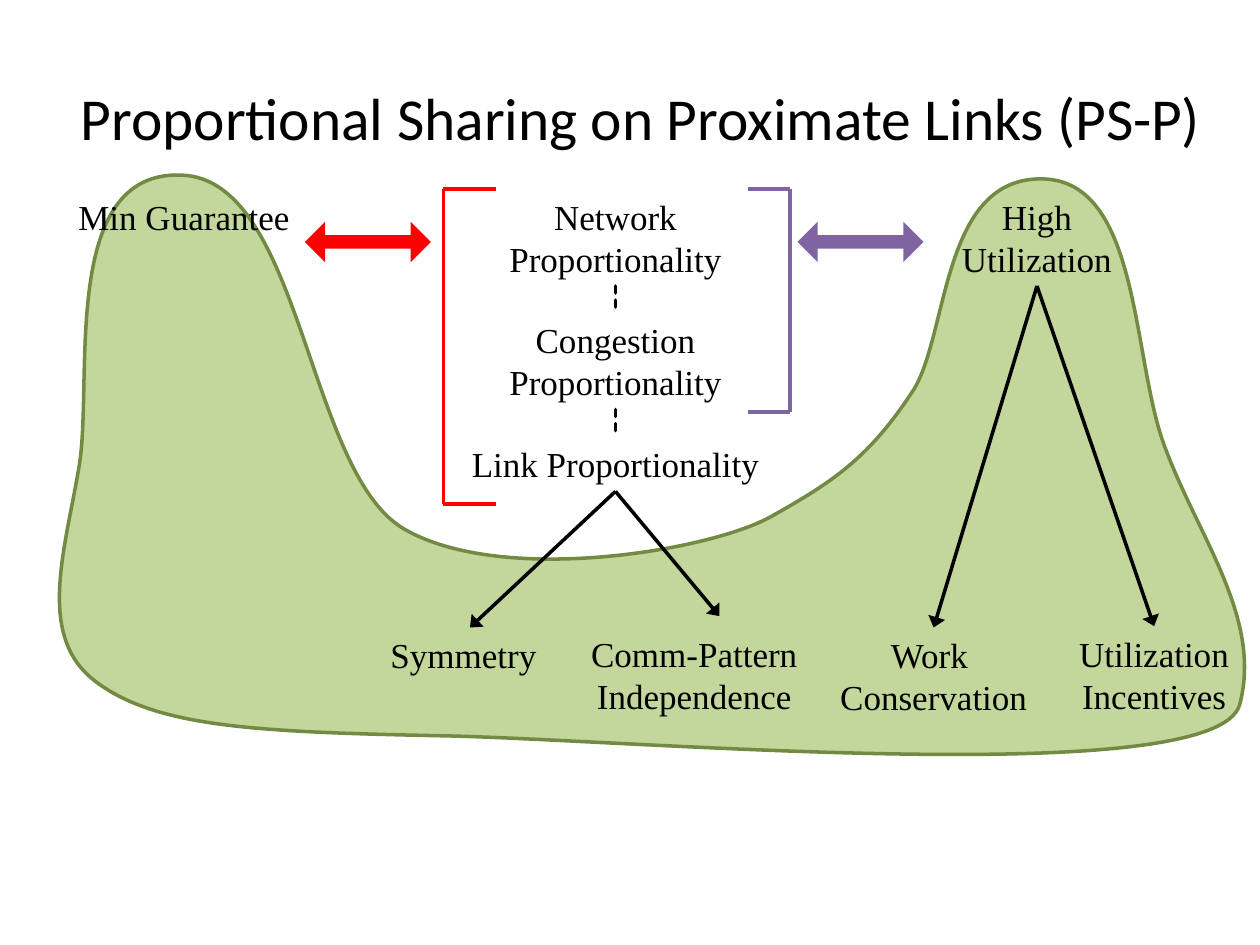
"""Build the slide on proportional sharing over proximate links."""
from dataclasses import dataclass

from pptx import Presentation
from pptx.dml.color import RGBColor
from pptx.enum.dml import MSO_LINE
from pptx.enum.shapes import MSO_CONNECTOR, MSO_SHAPE
from pptx.enum.text import MSO_ANCHOR, MSO_AUTO_SIZE, PP_ALIGN
from pptx.oxml.ns import qn
from pptx.util import Inches, Pt
from lxml import etree

COLS, ROWS = 10, 7.5
WIDTH = Inches(10)
CELL = WIDTH / COLS
STRAIGHT = MSO_CONNECTOR.STRAIGHT
ARROW = MSO_SHAPE.LEFT_RIGHT_ARROW
DASH = MSO_LINE.SQUARE_DOT
MIDDLE, TOP = MSO_ANCHOR.MIDDLE, MSO_ANCHOR.TOP
FIT, FIXED = MSO_AUTO_SIZE.SHAPE_TO_FIT_TEXT, MSO_AUTO_SIZE.NONE
CENTER, LEFT = PP_ALIGN.CENTER, PP_ALIGN.LEFT
ABOVE, BELOW = 0, 2
BLACK, RED, PURPLE = "000000", "FF0000", "8064A2"
GREEN, OLIVE = "C3D69B", "738A42"

Point = tuple[float, float]


@dataclass
class Label:
    """A text box placed in grid columns and rows."""
    text: str
    left: float
    top: float
    width: float
    height: float = 0.77
    wrap: bool = True
    align: PP_ALIGN = CENTER
    size: float = 20
    font: str = "Times New Roman"
    anchor: MSO_ANCHOR = TOP
    fit: MSO_AUTO_SIZE = FIT


@dataclass
class Bracket:
    """A square bracket and the two-way arrow beside it."""
    spine: float
    tip: float
    foot: float
    arrow: float
    color: str


TITLE = Label("Proportional Sharing on Proximate Links (PS-P)", 0.5, 0.3, 9.17, 1.25,
              size=34, font="Calibri", anchor=MIDDLE, fit=FIXED)
LABELS = {
    "min": Label("Min Guarantee", 0.5, 1.5, 1.92),
    "network": Label("Network Proportionality", 3.5, 1.5, 2.77),
    "congestion": Label("Congestion Proportionality", 3.5, 2.48, 2.77),
    "link": Label("Link Proportionality", 3.52, 3.46, 2.73, 0.44),
    "high": Label("High Utilization", 7.25, 1.5, 1.96),
    "symmetry": Label("Symmetry", 3, 4.98, 1.46, 0.44, wrap=False, align=LEFT),
    "pattern": Label("Comm-Pattern\nIndependence", 4.5, 4.97, 2.02, wrap=False),
    "work": Label("Work \nConservation", 6.42, 4.98, 1.98),
    "incentives": Label("Utilization\nIncentives", 8.43, 4.97, 1.46, wrap=False),
}
BRACKETS = [Bracket(3.52, 3.94, 4, 2.42, RED), Bracket(6.27, 5.94, 3.27, 6.33, PURPLE)]
ARROWS = [("high", "work"), ("high", "incentives"), ("link", "symmetry")]
DASHES = [("network", "congestion"), ("congestion", "link")]
NEAR, FAR = (0.47, 1.39), (9.87, 5.99)
START = (1.44, 1.39)
CURVES = [
    ((0.47, 1.35), (0.74, 3.02), (0.63, 3.69)),
    ((0.52, 4.36), (0.28, 5.05), (0.76, 5.41)),
    ((1.24, 5.77), (2.01, 5.81), (3.52, 5.84)),
    ((5.03, 5.87), (9.66, 6.28), (9.84, 5.59)),
    ((10.02, 4.91), (9.51, 4.26), (9.25, 3.56)),
    ((8.98, 2.87), (9.06, 1.43), (8.27, 1.42)),
    ((7.48, 1.41), (7.53, 2.61), (7.26, 3.08)),
    ((6.9, 3.64), (6.6, 3.83), (6.12, 4.1)),
    ((5.64, 4.37), (3.99, 4.65), (3.21, 4.2)),
    ((2.43, 3.75), (2.4, 1.42), START),
]


def grid(*cells: float) -> list[int]:
    """Turn grid lengths into slide lengths."""
    return [round(cell * CELL) for cell in cells]


def paint(form, color: str) -> None:
    """Give a fill, font or line one solid colour."""
    form.solid()
    form.fore_color.rgb = RGBColor.from_string(color)


def add_step(track, kind: str, *spots: Point) -> None:
    """Append one drawing step to a freeform outline."""
    step = etree.SubElement(track, qn(f"a:{kind}"))
    for col, row in spots:
        x, y = grid(col - NEAR[0], row - NEAR[1])
        etree.SubElement(step, qn("a:pt"), x=str(x), y=str(y))


def draw_valley(shapes) -> None:
    """Draw the green area behind the labels."""
    maker = shapes.build_freeform(*grid(*NEAR))
    maker.add_line_segments([grid(*FAR)])
    valley = maker.convert_to_shape()
    track = next(valley._element.iter(qn("a:path")))
    for step in list(track):
        track.remove(step)
    add_step(track, "moveTo", START)
    for curve in CURVES:
        add_step(track, "cubicBezTo", *curve)
    add_step(track, "close")
    valley.shadow.inherit = False
    paint(valley.fill, GREEN)
    paint(valley.line.fill, OLIVE)
    valley.line.width = Pt(2)


def draw_label(shapes, label: Label):
    """Draw a text box and return it."""
    box = shapes.add_textbox(*grid(label.left, label.top, label.width, label.height))
    frame = box.text_frame
    frame.text = label.text
    frame.word_wrap = label.wrap
    frame.auto_size = label.fit
    frame.vertical_anchor = label.anchor
    for para in frame.paragraphs:
        para.alignment = label.align
        para.font.size = Pt(label.size)
        para.font.name = label.font
        paint(para.font.fill, BLACK)
    return box


def draw_line(shapes, start: Point, end: Point, color: str = BLACK):
    """Draw a plain straight line and return it."""
    line = shapes.add_connector(STRAIGHT, *grid(*start, *end))
    paint(line.line.fill, color)
    line.line.width = Pt(2)
    etree.SubElement(line._element.spPr, qn("a:effectLst"))
    return line


def add_head(line) -> None:
    """Put a wide triangle at the end of a line."""
    etree.SubElement(line.line._get_or_add_ln(), qn("a:tailEnd"), type="triangle", w="lg")


def join(shapes, upper, lower):
    """Link the foot of one box to the top of another."""
    line = draw_line(shapes, (0, 0), (1, 1))
    line.begin_connect(upper, BELOW)
    line.end_connect(lower, ABOVE)
    return line


def draw_bracket(shapes, mark: Bracket) -> None:
    """Draw a bracket as a group, with its arrow."""
    group = shapes.add_group_shape().shapes
    for row in (1.5, mark.foot):
        draw_line(group, (mark.tip, row), (mark.spine, row), mark.color)
    draw_line(group, (mark.spine, 1.5), (mark.spine, mark.foot), mark.color)
    arrow = shapes.add_shape(ARROW, *grid(mark.arrow, 1.76, 1, 0.32))
    arrow.adjustments[0] = 0.33
    arrow.shadow.inherit = False
    paint(arrow.fill, mark.color)
    arrow.line.fill.background()


def main() -> None:
    """Build and save the slide."""
    deck = Presentation()
    deck.slide_width, deck.slide_height = grid(COLS, ROWS)
    shapes = deck.slides.add_slide(deck.slide_layouts[6]).shapes
    draw_valley(shapes)
    draw_label(shapes, TITLE)
    for mark in BRACKETS:
        draw_bracket(shapes, mark)
    boxes = {name: draw_label(shapes, label) for name, label in LABELS.items()}
    for upper, lower in ARROWS:
        add_head(join(shapes, boxes[upper], boxes[lower]))
    branch = draw_line(shapes, (4.88, 3.9), (5.71, 4.89))
    branch.begin_connect(boxes["link"], BELOW)
    add_head(branch)
    for upper, lower in DASHES:
        dash = join(shapes, boxes[upper], boxes[lower]).line
        dash.dash_style = DASH
        dash._get_or_add_ln().set("cap", "rnd")
    deck.save("out.pptx")


if __name__ == "__main__":
    main()
